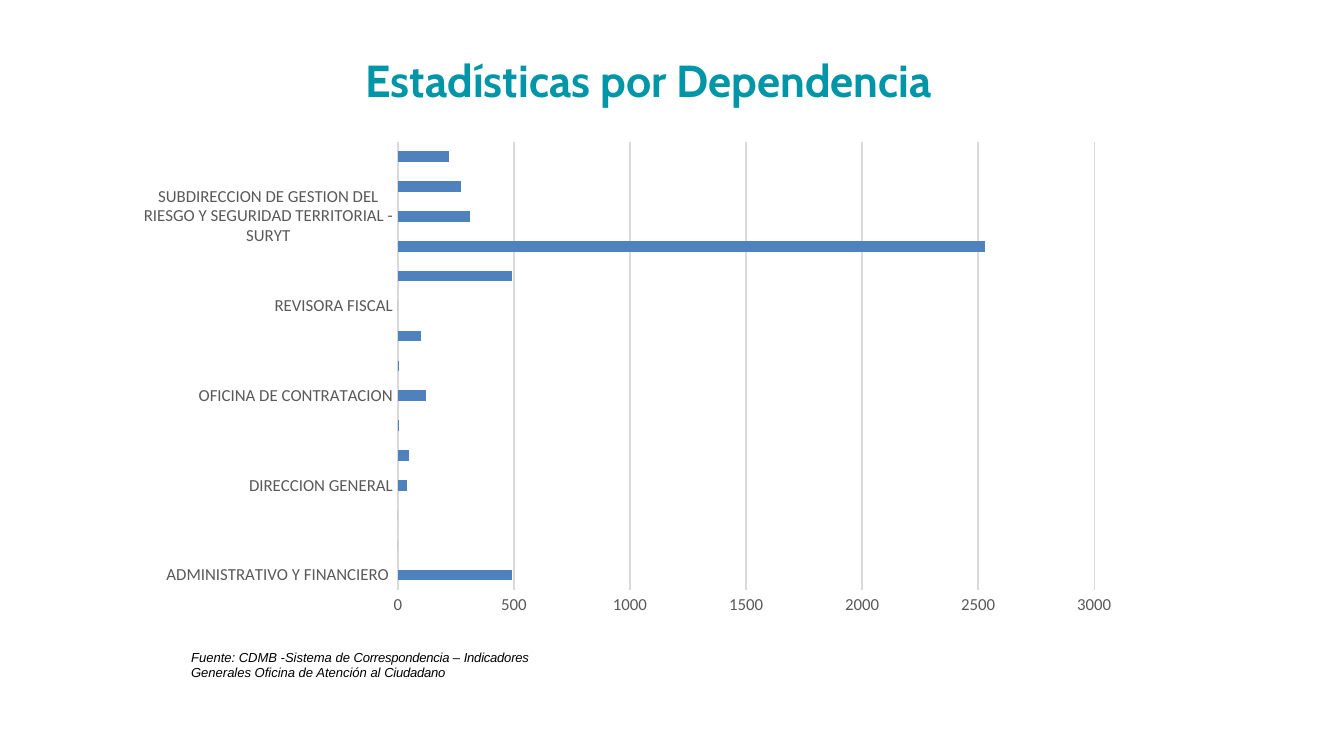
from pptx import Presentation
from pptx.chart.data import CategoryChartData
from pptx.dml.color import RGBColor
from pptx.enum.chart import XL_CHART_TYPE, XL_TICK_MARK
from pptx.enum.text import MSO_ANCHOR, PP_ALIGN
from pptx.util import Pt

BAR = XL_CHART_TYPE.BAR_CLUSTERED
NO_TICK = XL_TICK_MARK.NONE
LEFT = PP_ALIGN.LEFT
TOP, MIDDLE = MSO_ANCHOR.TOP, MSO_ANCHOR.MIDDLE

COLORS = {"title": "0096A7", "text": "000000", "axis": "595959",
          "grid": "D9D9D9", "bar": "4F81BD"}
TITLE_FONT = {"name": "Cabin", "size": Pt(24), "bold": True}
SOURCE_FONT = {"name": "Arial", "size": Pt(7), "italic": True}
CHART_FONT = {"name": "Calibri", "size": Pt(10)}
AXIS_FONT = {"name": "Calibri", "size": Pt(9)}

# Text and letter spacing in hundredths of a point
TITLE = [("Estadísticas por Dependencia", 0)]
SOURCE = [
    ("Fuente: CDMB ", 0),
    ("-", -20),
    ("Sistema de ", 0),
    ("Correspondencia ", -10),
    ("– ", 0),
    ("Indicadores ", -10),
    ("Generales Oficina de Atención al ", 0),
    ("Ciudadano", -10),
]
DATA = [
    ("ADMINISTRATIVO Y FINANCIERO ", 490),
    ("ASAMBLEA GENERAL", 0),
    ("CONSEJO DIRECTIVO", 0),
    ("DIRECCION GENERAL", 40),
    ("OFICINA ASESORA DE DIRECCIONAMIENTO ESTRATEGICO INSTITUCIONAL", 50),
    ("OFICINA CONTROL INTERNO", 4),
    ("OFICINA DE CONTRATACION", 120),
    ("OFICINA DE CONTROL DISCIPLINARIO INTERNO", 4),
    ("OFICINA DE GESTION SOCIAL Y AMBIENTAL", 100),
    ("REVISORA FISCAL", 0),
    ("SECRETARIA GENERAL", 490),
    ("SUBDIRECCION DE EVALUACION Y CONTROL AMBIENTAL", 2530),
    ("SUBDIRECCION DE GESTION DEL RIESGO Y SEGURIDAD TERRITORIAL - SURYT", 310),
    ("SUBDIRECCION DE GESTION INTEGRAL DE LA OFERTA AMBIENTAL- SUGOA", 270),
    ("SUBDIRECCION ORDENAMIENTO Y PLANIFICACION INTEGRAL DEL TERRITORIO - SOPIT", 220),
]


def set_font(font, values, color):
    for name, value in values.items():
        setattr(font, name, value)
    font.color.rgb = RGBColor.from_string(COLORS[color])


def set_line(line, color):
    line.width = Pt(0.75)
    line.color.rgb = RGBColor.from_string(COLORS[color])


def fill_text(sp, runs, font, color, anchor):
    tf = sp.text_frame
    tf.word_wrap = True
    tf.vertical_anchor = anchor
    for side in ("left", "top", "right", "bottom"):
        setattr(tf, f"margin_{side}", 0)
    p = tf.paragraphs[0]
    p.alignment = LEFT
    for text, spacing in runs:
        r = p.add_run()
        r.text = text
        set_font(r.font, font, color)
        if spacing:
            r._r.get_or_add_rPr().set("spc", str(spacing))


def add_title(s, left, top, width, height):
    sp = s.shapes.title
    sp.left, sp.top, sp.width, sp.height = left, top, width, height
    fill_text(sp, TITLE, TITLE_FONT, "title", MIDDLE)


def add_source(s, left, top, width, height):
    sp = s.shapes.add_textbox(left, top, width, height)
    fill_text(sp, SOURCE, SOURCE_FONT, "text", TOP)
    sp.text_frame.margin_left = sp.text_frame.margin_top = Pt(0.9)


def add_bar_chart(s, left, top, width, height):
    data = CategoryChartData()
    data.categories = [name for name, _ in DATA]
    data.add_series("Series 1", [value for _, value in DATA])
    chart = s.shapes.add_chart(BAR, left, top, width, height, data).chart
    chart.has_legend = chart.has_title = False
    set_font(chart.font, CHART_FONT, "text")

    plot = chart.plots[0]
    plot.gap_width = 182
    plot.vary_by_categories = False
    fill = plot.series[0].format.fill
    fill.solid()
    fill.fore_color.rgb = RGBColor.from_string(COLORS["bar"])

    cat, val = chart.category_axis, chart.value_axis
    for axis in (cat, val):
        axis.major_tick_mark = axis.minor_tick_mark = NO_TICK
        set_font(axis.tick_labels.font, AXIS_FONT, "axis")
    set_line(cat.format.line, "grid")
    val.minimum_scale, val.maximum_scale, val.major_unit = 0, 3000, 500
    val.format.line.fill.background()
    set_line(val.major_gridlines.format.line, "grid")


def main():
    prs = Presentation()
    prs.slide_width, prs.slide_height = Pt(720), Pt(405)
    s = prs.slides.add_slide(prs.slide_layouts[5])
    add_source(s, Pt(101.5), Pt(346.8), Pt(186.5), Pt(18.7))
    add_title(s, Pt(195.8), Pt(28.4), Pt(387.4), Pt(28.8))
    add_bar_chart(s, Pt(66.2), Pt(70.6), Pt(540), Pt(264.2))
    prs.save("out.pptx")


if __name__ == "__main__":
    main()
